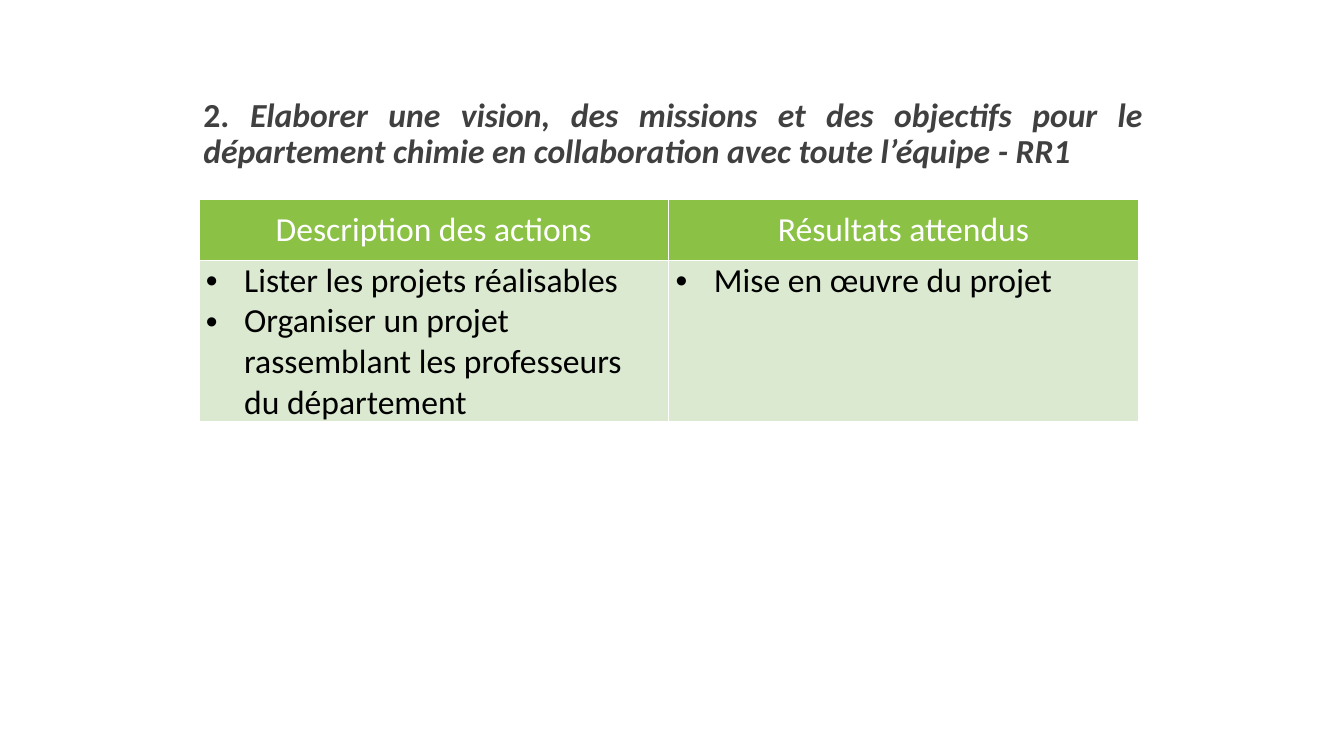
import pptx
import pptx.util
import pptx.dml.color
import pptx.enum.text
import pptx.oxml.ns
from lxml import etree

COLORS = {
    "title": "404040",
    "header": "8BC145",
    "body": "DAE9CF",
    "white": "FFFFFF",
    "black": "000000",
}
Align = pptx.enum.text.PP_ALIGN
Anchor = pptx.enum.text.MSO_ANCHOR


def rgb(name):
    return pptx.dml.color.RGBColor.from_string(COLORS[name])


def add_span(para, text, *, font="Calibri", size=24, color="black", bold=False, italic=False):
    """Append formatted text to a paragraph."""
    span = para.add_run()
    span.text = text
    span.font.name = font
    span.font.size = pptx.util.Pt(size)
    span.font.bold = bold
    span.font.italic = italic
    span.font.color.rgb = rgb(color)


def add_child(parent, tag, **attributes):
    return etree.SubElement(parent, pptx.oxml.ns.qn(tag), **attributes)


class SlideBuilder:
    """Places elements in percentages of the slide's width and height."""

    def __init__(self, deck):
        self.deck = deck
        self.page = deck.slides.add_slide(deck.slide_layouts[6])

    def across(self, share):
        return round(self.deck.slide_width * share / 100)

    def down(self, share):
        return round(self.deck.slide_height * share / 100)

    def title(self, left, top, width, height, parts):
        box = self.page.shapes.add_textbox(
            self.across(left), self.down(top), self.across(width), self.down(height))
        frame = box.text_frame
        frame.word_wrap = True
        frame.vertical_anchor = Anchor.MIDDLE
        para = frame.paragraphs[0]
        para.alignment = Align.JUSTIFY
        para.line_spacing = 0.9
        for text, italic in parts:
            add_span(para, text, color="title", bold=True, italic=italic)

    def table(self, left, top, width, row_heights, headers, lists):
        frame = self.page.shapes.add_table(
            2, len(headers), self.across(left), self.down(top),
            self.across(width), self.down(sum(row_heights)))
        table = frame.table
        table.first_row = table.horz_banding = False
        for row, height in zip(table.rows, row_heights):
            row.height = self.down(height)
        for column, (header, items) in enumerate(zip(headers, lists)):
            self.header_cell(table.cell(0, column), header)
            self.list_cell(table.cell(1, column), items)

    def header_cell(self, cell, text):
        self.style_cell(cell, "header", 0.1, 0.1)
        para = cell.text_frame.paragraphs[0]
        para.alignment = Align.CENTER
        add_span(para, text, color="white")

    def list_cell(self, cell, items):
        self.style_cell(cell, "body", 0.07, 0)
        frame = cell.text_frame
        indent = pptx.util.Inches(0.38)
        for number, item in enumerate(items):
            para = frame.add_paragraph() if number else frame.paragraphs[0]
            add_span(para, item)
            # Hanging bullet
            properties = para._p.get_or_add_pPr()
            properties.set("marL", str(indent))
            properties.set("indent", str(-indent))
            add_child(properties, "a:buFont", typeface="Arial")
            add_child(properties, "a:buChar", char="•")

    def style_cell(self, cell, fill, side, edge):
        cell.margin_left = cell.margin_right = pptx.util.Inches(side)
        cell.margin_top = cell.margin_bottom = pptx.util.Inches(edge)
        # Borders precede the fill in the cell properties
        properties = cell._tc.get_or_add_tcPr()
        for name in ("a:lnL", "a:lnR", "a:lnT", "a:lnB"):
            line = add_child(properties, name, w=str(pptx.util.Pt(1)))
            paint = add_child(line, "a:solidFill")
            add_child(paint, "a:srgbClr", val=COLORS["white"])
        cell.fill.solid()
        cell.fill.fore_color.rgb = rgb(fill)


def main():
    deck = pptx.Presentation()
    deck.slide_width = pptx.util.Inches(13.33)
    deck.slide_height = pptx.util.Inches(7.5)
    builder = SlideBuilder(deck)

    # Heading
    builder.title(14.4, 10, 71.4, 15.6, [
        ("2. ", False),
        ("Elaborer une vision, des missions et des objectifs pour le département "
         "chimie en collaboration avec toute l’équipe - RR1", True),
    ])

    # Actions and expected results
    builder.table(
        14.8, 26.4, 69.9, [8, 21.33],
        ["Description des actions", "Résultats attendus"],
        [["Lister les projets réalisables",
          "Organiser un projet rassemblant les professeurs du département"],
         ["Mise en œuvre du projet"]])

    deck.save("out.pptx")


if __name__ == "__main__":
    main()
